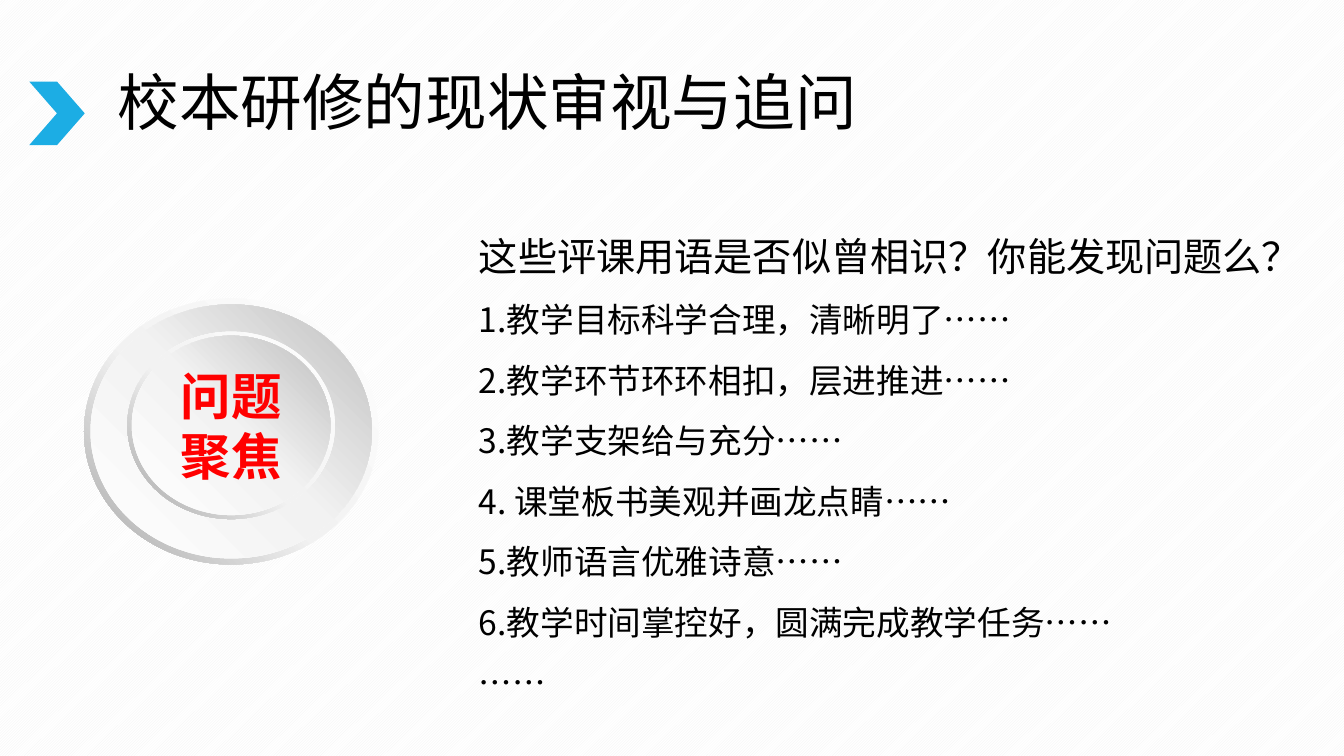
from lxml import etree
from pptx import Presentation
from pptx.dml.color import RGBColor
from pptx.enum.dml import MSO_PATTERN
from pptx.enum.shapes import MSO_SHAPE
from pptx.enum.text import MSO_ANCHOR, MSO_AUTO_SIZE, PP_ALIGN
from pptx.oxml import parse_xml
from pptx.oxml.ns import nsdecls, qn
from pptx.util import Inches, Pt

COLORS = {"accent": "1CADE4", "text": "000000", "focus": "FF0000",
          "stripe": "F2F2F2", "white": "FFFFFF", "mid": "F2F2F2",
          "rim": "A6A6A6", "disc": "BFBFBF"}
FONT = "Noto Sans CJK SC"
RGB = {name: RGBColor.from_string(value) for name, value in COLORS.items()}

prs = Presentation()
prs.slide_width, prs.slide_height = Inches(13.33), Inches(7.5)
COL, ROW = prs.slide_width / 100, prs.slide_height / 100


def box(left, top, width, height):
    """Turn percentages of the slide into left, top, width, height."""
    return [round(v) for v in (left * COL, top * ROW, width * COL, height * ROW)]


def write(p, text, size, color="text", bold=False):
    """Add a run to p in the slide's font, Latin and East Asian."""
    r = p.add_run()
    r.text = text
    formats = {"name": FONT, "size": Pt(size), "bold": bold}
    for key, value in formats.items():
        setattr(r.font, key, value)
    r.font.color.rgb = RGB[color]
    etree.SubElement(r.font._element, qn("a:ea"), typeface=FONT)


s = prs.slides.add_slide(prs.slide_layouts[1])
bg = s.background.fill
bg.patterned()
bg.pattern = MSO_PATTERN.LIGHT_UPWARD_DIAGONAL
bg.fore_color.rgb, bg.back_color.rgb = RGB["stripe"], RGB["white"]

# Title and its marker
chevron = s.shapes.add_shape(MSO_SHAPE.CHEVRON, *box(2.18, 10.8, 4.13, 8.4))
chevron.shadow.inherit = False
chevron.fill.solid()
chevron.fill.fore_color.rgb = RGB["accent"]
chevron.line.fill.background()

title, body = s.placeholders
areas = [(title, box(6.75, 9.2, 59.04, 9.47), MSO_ANCHOR.MIDDLE),
         (body, box(34.88, 26.93, 63.32, 67.33), MSO_ANCHOR.TOP)]
for sp, area, anchor in areas:
    for key, value in zip(("left", "top", "width", "height"), area):
        setattr(sp, key, value)
    formats = {"auto_size": MSO_AUTO_SIZE.NONE, "word_wrap": True,
               "vertical_anchor": anchor}
    for key, value in formats.items():
        setattr(sp.text_frame, key, value)

p = title.text_frame.paragraphs[0]
p.alignment, p.line_spacing = PP_ALIGN.CENTER, 0.9
write(p, "校本研修的现状审视与追问", 44)

# Question and the typical comments
lines = [
    "这些评课用语是否似曾相识？你能发现问题么？",
    "1.教学目标科学合理，清晰明了……",
    "2.教学环节环环相扣，层进推进……",
    "3.教学支架给与充分……",
    "4. 课堂板书美观并画龙点睛……",
    "5.教师语言优雅诗意……",
    "6.教学时间掌控好，圆满完成教学任务……",
    "……",
]
tf = body.text_frame
for i, line in enumerate(lines):
    p = tf.add_paragraph() if i else tf.paragraphs[0]
    p.line_spacing, p.space_before = 1.5, Pt(0)
    pPr = p._p.get_or_add_pPr()
    pPr.set("marL", "0")
    pPr.set("indent", "0")
    etree.SubElement(pPr, qn("a:buNone"))
    write(p, line, 24 if i else 28)

# Round button: two discs, each inside a thin rim
CENTER_COL = 17.2
rounds = [  # preset, centre row, width, height, end colour, middle stop, angle
    (MSO_SHAPE.DONUT, 57.07, 21.9, 35.2, "rim", 55, 135),
    (MSO_SHAPE.OVAL, 57.07, 20.93, 33.6, "disc", 51, 315),
    (MSO_SHAPE.DONUT, 56.27, 15.45, 24.8, "rim", 55, 135),
    (MSO_SHAPE.OVAL, 56.27, 14.78, 23.73, "disc", 51, 315),
]
button = s.shapes.add_group_shape()
for preset, row, width, height, end, middle, angle in rounds:
    sp = button.shapes.add_shape(
        preset, *box(CENTER_COL - width / 2, row - height / 2, width, height))
    sp.shadow.inherit = False
    sp.line.fill.background()
    if preset == MSO_SHAPE.DONUT:
        sp.adjustments[0] = 0.049
    stops = "".join(
        f'<a:gs pos="{pos * 1000}"><a:srgbClr val="{COLORS[color]}"/></a:gs>'
        for pos, color in ((0, "white"), (middle, "mid"), (100, end)))
    gradient = parse_xml(
        f'<a:gradFill {nsdecls("a")} rotWithShape="1"><a:gsLst>{stops}</a:gsLst>'
        f'<a:lin ang="{angle * 60000}" scaled="0"/></a:gradFill>')
    sp._element.spPr.find(qn("a:prstGeom")).addnext(gradient)

tf = sp.text_frame
tf.word_wrap, tf.vertical_anchor = True, MSO_ANCHOR.MIDDLE
p = tf.paragraphs[0]
p.alignment = PP_ALIGN.CENTER
write(p, "问题聚焦", 36, "focus", bold=True)

prs.save("out.pptx")
